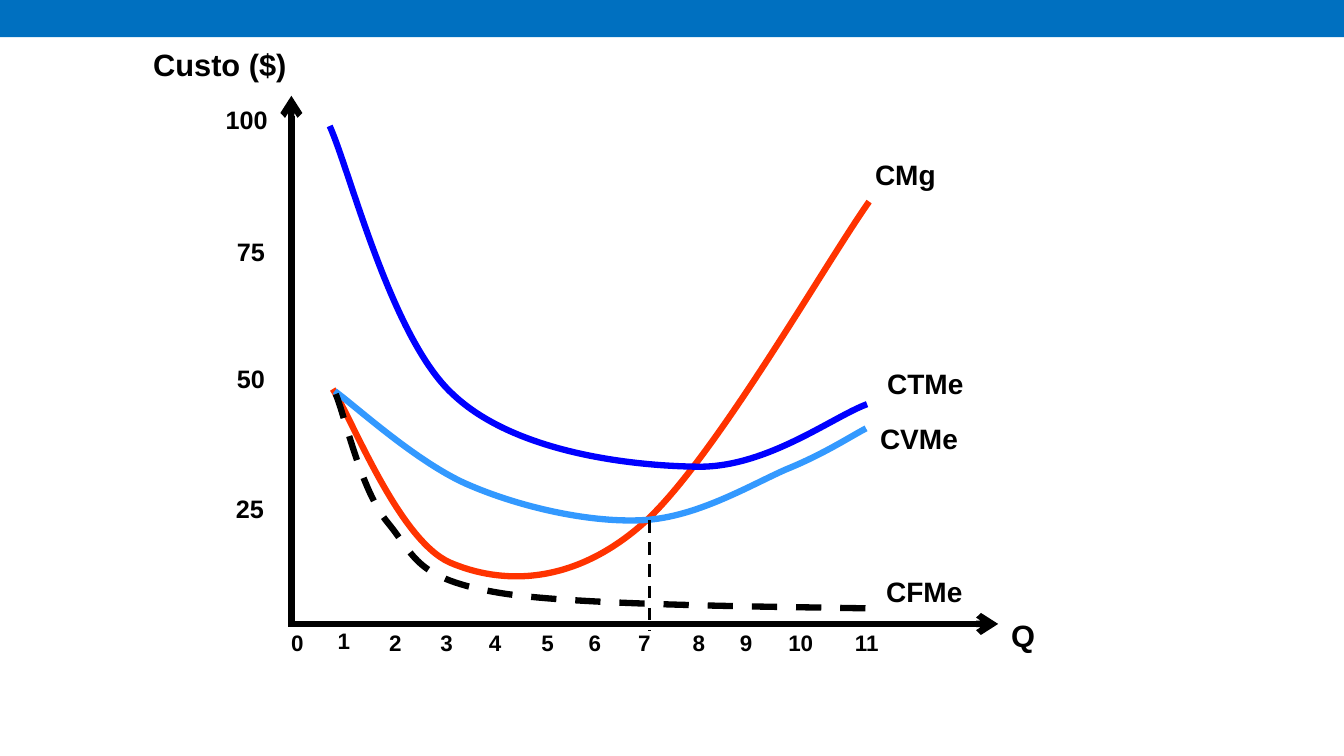
from dataclasses import dataclass

from lxml.etree import SubElement
from pptx import Presentation
from pptx.dml.color import RGBColor
from pptx.enum.dml import MSO_LINE
from pptx.enum.shapes import MSO_CONNECTOR, MSO_SHAPE
from pptx.enum.text import MSO_AUTO_SIZE, PP_ALIGN
from pptx.oxml.ns import qn
from pptx.slide import Slide
from pptx.util import Emu, Pt

PX = 9144
COLORS = {
    "band": "0070C0",
    "ink": "000000",
    "marginal": "FF3300",
    "variable": "3399FF",
    "total": "0000FF",
}
Point = tuple[int, int]


@dataclass
class Label:
    text: str
    left: int
    top: int
    width: int
    height: int
    size: int
    align: PP_ALIGN = PP_ALIGN.LEFT


@dataclass
class Line:
    start: Point
    end: Point
    weight: float
    arrow: bool = False
    dashed: bool = False


@dataclass
class Curve:
    color: str
    points: list[Point]
    dashed: bool = False


X_LEFTS = [279, 325, 376, 427, 475, 527, 574, 623, 677, 724, 772, 838]

LABELS = [
    Label("Q", 993, 607, 44, 47, 22),
    Label("Custo ($)", 140, 40, 154, 47, 22, PP_ALIGN.RIGHT),
    Label("25", 224, 484, 52, 45, 18),
    Label("50", 225, 356, 52, 45, 18),
    Label("75", 225, 229, 52, 45, 18),
    Label("100", 214, 99, 67, 45, 18),
    *(
        Label(str(n), left, 617 if n == 1 else 619, 35 if n < 10 else 49, 41, 16)
        for n, left in enumerate(X_LEFTS)
    ),
    Label("CMg", 858, 151, 88, 49, 20),
    Label("CTMe", 870, 359, 105, 49, 20),
    Label("CVMe", 863, 413, 106, 49, 20),
    Label("CFMe", 869, 565, 105, 49, 20),
]

AXES = [
    Line((289, 618), (289, 95), 4.5, arrow=True),
    Line((286, 619), (990, 619), 4.5, arrow=True),
]
MINIMUM_GUIDE = Line((644, 516), (644, 625), 2.25, dashed=True)

CURVES = [
    Curve("marginal", [
        (330, 386), (349, 415), (395, 535), (446, 558), (497, 580),
        (567, 581), (636, 521), (705, 461), (815, 267), (862, 200),
    ]),
    Curve("variable", [
        (332, 388), (354, 404), (416, 461), (467, 482), (519, 504),
        (587, 519), (639, 516), (691, 513), (743, 482), (779, 466),
        (816, 451), (842, 434), (859, 425),
    ]),
    Curve("total", [
        (327, 125), (347, 169), (388, 335), (449, 391), (509, 448),
        (622, 462), (690, 463), (759, 465), (825, 414), (860, 401),
    ]),
    Curve("ink", [
        (333, 391), (342, 412), (358, 487), (385, 519), (412, 552),
        (412, 574), (494, 588), (576, 602), (812, 602), (876, 604),
    ], dashed=True),
]


def px(n: int) -> Emu:
    return Emu(n * PX)


def rgb(name: str) -> RGBColor:
    return RGBColor.from_string(COLORS[name])


def add_band(s: Slide) -> None:
    sp = s.shapes.add_shape(MSO_SHAPE.RECTANGLE, 0, 0, px(1333), px(37))
    sp.shadow.inherit = False
    sp.fill.solid()
    sp.fill.fore_color.rgb = rgb("band")
    sp.line.fill.background()


def add_label(s: Slide, label: Label) -> None:
    sp = s.shapes.add_textbox(
        px(label.left), px(label.top), px(label.width), px(label.height)
    )
    tf = sp.text_frame
    tf.word_wrap = False
    tf.auto_size = MSO_AUTO_SIZE.SHAPE_TO_FIT_TEXT
    p = tf.paragraphs[0]
    p.text = label.text
    p.alignment = label.align
    p.font.name = "Arial"
    p.font.size = Pt(label.size)
    p.font.bold = True
    p.font.color.rgb = rgb("ink")


def add_line(s: Slide, line: Line) -> None:
    sp = s.shapes.add_connector(
        MSO_CONNECTOR.STRAIGHT, *map(px, line.start), *map(px, line.end)
    )
    sp.line.color.rgb = rgb("ink")
    sp.line.width = Pt(line.weight)
    if line.dashed:
        sp.line.dash_style = MSO_LINE.DASH
    if line.arrow:
        SubElement(sp.line._get_or_add_ln(), qn("a:tailEnd"), type="arrow")
    SubElement(sp._element.spPr, qn("a:effectLst"))


def add_curve(s: Slide, curve: Curve) -> None:
    builder = s.shapes.build_freeform(*curve.points[0], scale=PX)
    builder.add_line_segments(curve.points[1:], close=False)
    sp = builder.convert_to_shape()
    outline = sp._element.spPr.find(".//" + qn("a:path"))
    segments = outline.findall(qn("a:lnTo"))
    for i in range(0, len(segments), 3):
        bezier = SubElement(outline, qn("a:cubicBezTo"))
        for segment in segments[i:i + 3]:
            bezier.append(segment[0])
            outline.remove(segment)
    sp.shadow.inherit = False
    sp.fill.background()
    sp.line.color.rgb = rgb(curve.color)
    sp.line.width = Pt(4.5)
    if curve.dashed:
        sp.line.dash_style = MSO_LINE.DASH


def main() -> None:
    prs = Presentation()
    prs.slide_width, prs.slide_height = px(1333), px(750)
    s = prs.slides.add_slide(prs.slide_layouts[6])
    add_band(s)
    for axis in AXES:
        add_line(s, axis)
    for label in LABELS:
        add_label(s, label)
    for curve in CURVES:
        add_curve(s, curve)
    add_line(s, MINIMUM_GUIDE)
    prs.save("out.pptx")


if __name__ == "__main__":
    main()
